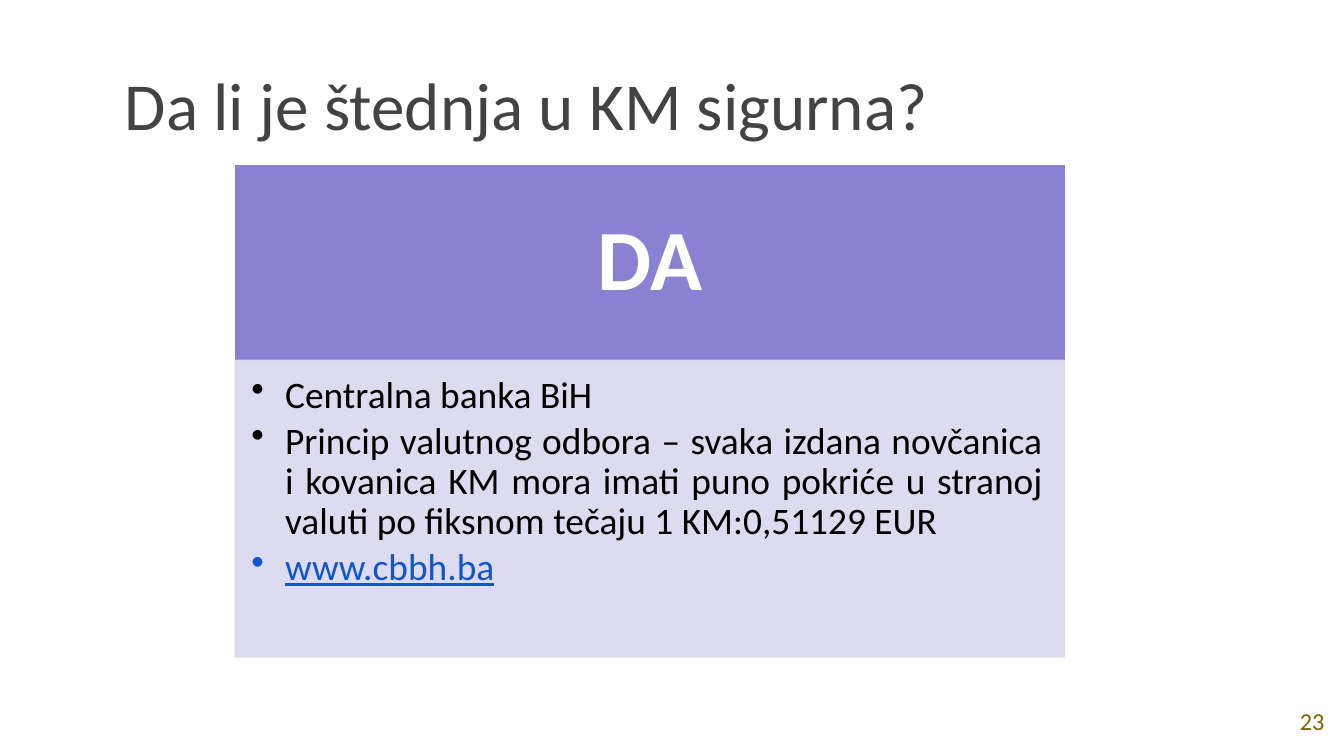
import pptx
import pptx.util
import pptx.dml.color
import pptx.enum.shapes
import pptx.enum.text
import pptx.oxml
import pptx.oxml.ns
from pptx.util import Cm

COLORS = {
    "title": "434343",
    "number": "7F6000",
    "header": "8B81D2",
    "panel": "DAD8EE",
    "white": "FFFFFF",
    "black": "000000",
    "link": "1155CC",
}
ALIGN = pptx.enum.text.PP_ALIGN
ANCHOR = pptx.enum.text.MSO_ANCHOR


class SlideBuilder:
    font_name = "Calibri"

    def __init__(self, slide):
        self.slide = slide

    def color(self, name):
        return pptx.dml.color.RGBColor.from_string(COLORS[name])

    def style_frame(self, frame, anchor, margins):
        frame.word_wrap = True
        frame.auto_size = pptx.enum.text.MSO_AUTO_SIZE.NONE
        frame.vertical_anchor = anchor
        sides = ("left", "top", "right", "bottom")
        for side, margin in zip(sides, margins):
            setattr(frame, f"margin_{side}", Cm(margin))

    def style_paragraph(self, para, size, color, align, bold=False):
        para.alignment = align
        for span in para.runs:
            span.font.name = self.font_name
            span.font.size = pptx.util.Pt(size)
            span.font.bold = bold
            span.font.color.rgb = self.color(color)

    def place(self, box, left, top, width, height):
        box.left, box.top = Cm(left), Cm(top)
        box.width, box.height = Cm(width), Cm(height)

    def title(self, text, *area):
        box = self.slide.shapes.title
        self.place(box, *area)
        box.text_frame.text = text
        self.style_frame(box.text_frame, ANCHOR.BOTTOM, [0.25] * 4)
        self.style_paragraph(box.text_frame.paragraphs[0], 36, "title", ALIGN.LEFT)

    def page_number(self, text, *area):
        box = self.slide.shapes.add_textbox(*map(Cm, area))
        box.text_frame.text = text
        self.style_frame(box.text_frame, ANCHOR.MIDDLE, [0.25] * 4)
        self.style_paragraph(box.text_frame.paragraphs[0], 13, "number", ALIGN.CENTER)

    def block(self, color, *area, opacity=100):
        kind = pptx.enum.shapes.MSO_SHAPE.RECTANGLE
        box = self.slide.shapes.add_shape(kind, *map(Cm, area))
        box.shadow.inherit = False
        box.fill.solid()
        box.fill.fore_color.rgb = self.color(color)
        box.line.color.rgb = self.color(color)
        box.line.width = pptx.util.Pt(0.75)
        if opacity < 100:
            for element in box._element.spPr.iter(pptx.oxml.ns.qn("a:srgbClr")):
                alpha = pptx.oxml.parse_xml(
                    f'<a:alpha {pptx.oxml.ns.nsdecls("a")} val="{opacity * 1000}"/>')
                element.append(alpha)
        return box

    def header(self, text, *area):
        frame = self.block("header", *area).text_frame
        frame.text = text
        self.style_frame(frame, ANCHOR.MIDDLE, (0.91, 0.51, 0.91, 0.51))
        para = frame.paragraphs[0]
        para.line_spacing = 0.9
        self.style_paragraph(para, 46, "white", ALIGN.CENTER, bold=True)

    def add_bullet(self, para):
        properties = para._p.get_or_add_pPr()
        properties.set("marL", str(Cm(0.64)))
        properties.set("indent", str(-Cm(0.64)))
        properties.append(pptx.oxml.parse_xml(
            f'<a:buChar {pptx.oxml.ns.nsdecls("a")} char="•"/>'))

    def bullet_panel(self, items, *area):
        frame = self.block("panel", *area, opacity=90).text_frame
        frame.text = "\n".join(text for text, color in items)
        self.style_frame(frame, ANCHOR.TOP, (0.3, 0.3, 0.41, 0.43))
        for para, (text, color) in zip(frame.paragraphs, items):
            self.add_bullet(para)
            para.line_spacing = 0.9
            para.space_after = pptx.util.Pt(3)
            self.style_paragraph(para, 20, color, ALIGN.JUSTIFY)
            para.runs[0].font.underline = color == "link"


def main():
    deck = pptx.Presentation()
    deck.slide_width, deck.slide_height = Cm(25.4), Cm(14.29)
    page = SlideBuilder(deck.slides.add_slide(deck.slide_layouts[5]))

    left, top, width, header_height = 4.45, 3.13, 15.67, 3.68
    page.title("Da li je štednja u KM sigurna?", 2.11, 0.58, 18.21, 2.39)
    page.header("DA", left, top, width, header_height)
    page.bullet_panel(
        [
            ("Centralna banka BiH", "black"),
            ("Princip valutnog odbora – svaka izdana novčanica i kovanica KM "
             "mora imati puno pokriće u stranoj valuti po fiksnom tečaju "
             "1 KM:0,51129 EUR", "black"),
            ("www.cbbh.ba", "link"),
        ],
        left, top + header_height, width, 5.61)
    page.page_number("23", 24.2, 12.98, 1.2, 1.3)
    deck.save("out.pptx")


if __name__ == "__main__":
    main()
